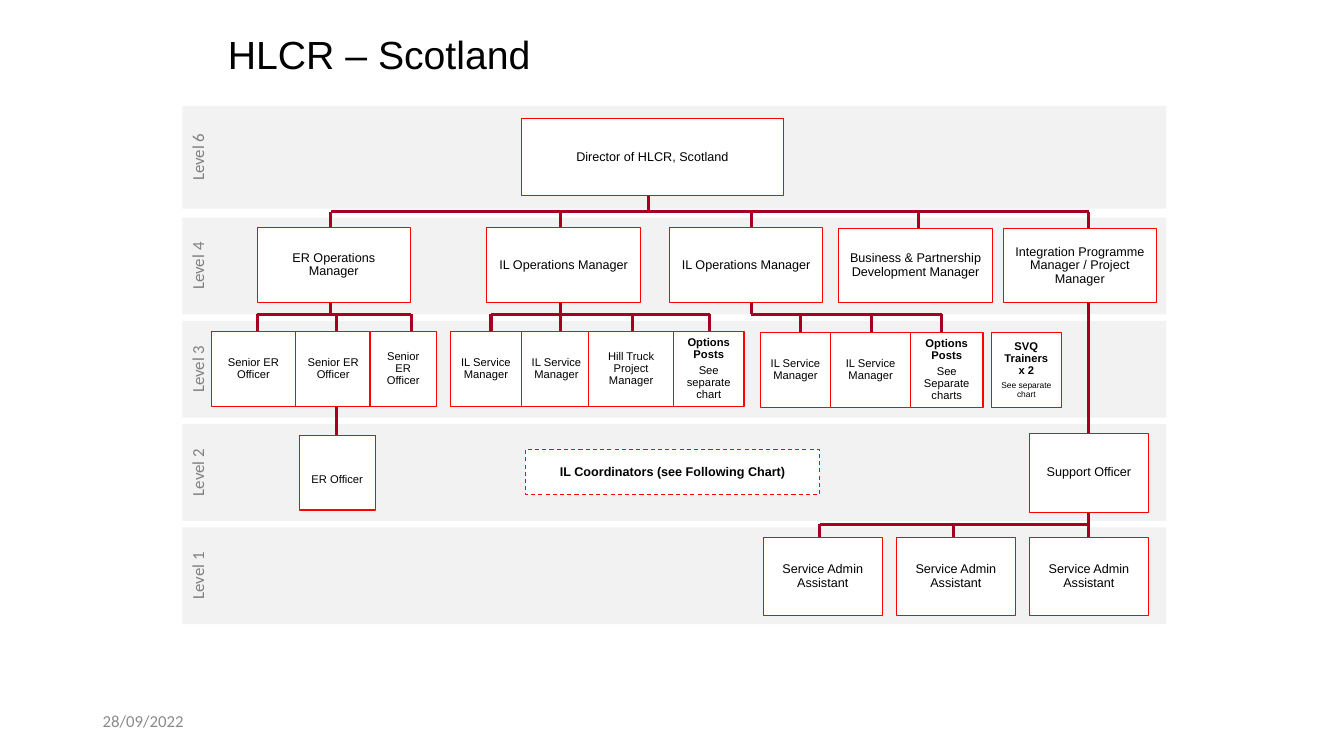
from pptx import Presentation
from pptx.dml.color import RGBColor
from pptx.enum.dml import MSO_LINE
from pptx.enum.shapes import MSO_CONNECTOR, MSO_SHAPE
from pptx.enum.text import MSO_ANCHOR, PP_ALIGN
from pptx.util import Inches, Pt
from lxml import etree

BLACK = RGBColor(0, 0, 0)
WHITE = RGBColor(0xFF, 0xFF, 0xFF)
RED = RGBColor(0xFF, 0, 0)
CRIMSON = RGBColor(0xA5, 0, 0x21)
BAND = RGBColor(0xF2, 0xF2, 0xF2)
LABEL = RGBColor(0x80, 0x80, 0x80)
DATE = RGBColor(0x8C, 0x8C, 0x8C)
A_NS = "http://schemas.openxmlformats.org/drawingml/2006/main"


class OrgChart:
    def __init__(self, prs):
        self.s = prs.slides.add_slide(prs.slide_layouts[5])
        self.shapes = self.s.shapes

    def style(self, p, size, color=BLACK, font="Arial", bold=False):
        for r in p.runs:
            r.font.size, r.font.name, r.font.bold = Pt(size), font, bold
            r.font.color.rgb = color

    def title(self, text, x, y, w, h):
        sp = self.shapes.title
        sp.left, sp.top, sp.width, sp.height = map(Inches, (x, y, w, h))
        tf = sp.text_frame
        tf.text = text
        tf.vertical_anchor = MSO_ANCHOR.MIDDLE
        p = tf.paragraphs[0]
        p.alignment, p.line_spacing = PP_ALIGN.LEFT, 0.9
        self.style(p, 28)

    def date(self, text, x, y, w, h):
        tf = self.shapes.add_textbox(*map(Inches, (x, y, w, h))).text_frame
        tf.word_wrap = True
        tf.vertical_anchor = MSO_ANCHOR.MIDDLE
        tf.text = text
        self.style(tf.paragraphs[0], 12, DATE, "Calibri")

    def band(self, text, y, h, inset=0.05):
        sp = self.shapes.add_shape(MSO_SHAPE.ROUNDED_RECTANGLE, Inches(1.81),
                                   Inches(y), Inches(9.76), Inches(h))
        sp.adjustments[0] = 0
        sp.shadow.inherit = False
        sp.fill.solid()
        sp.fill.fore_color.rgb = BAND
        sp.line.fill.background()
        tf = sp.text_frame
        tf.text = text
        tf.vertical_anchor = MSO_ANCHOR.TOP
        tf.margin_top = Inches(inset)
        tf._txBody.bodyPr.set("vert", "vert270")
        p = tf.paragraphs[0]
        p.alignment = PP_ALIGN.CENTER
        self.style(p, 12, LABEL, "Calibri")

    def line(self, x1, y1, x2, y2):
        c = self.shapes.add_connector(MSO_CONNECTOR.STRAIGHT,
                                      *map(Inches, (x1, y1, x2, y2)))
        c.line.color.rgb = CRIMSON
        c.line.width = Pt(2.25)
        etree.SubElement(c._element.spPr, f"{{{A_NS}}}effectLst")

    def tree(self, y, left, right, drops):
        """A horizontal bar with vertical drops given as (x, bottom)."""
        self.line(left, y, right, y)
        for x, bottom in drops:
            self.line(x, y, x, bottom)

    def box(self, text, x, y, w, h, size=9, bold=False, note=None,
            note_size=8, dashed=False, top=0.05):
        sp = self.shapes.add_shape(MSO_SHAPE.RECTANGLE,
                                   *map(Inches, (x, y, w, h)))
        sp.shadow.inherit = False
        sp.fill.solid()
        sp.fill.fore_color.rgb = WHITE
        sp.line.color.rgb = RED
        sp.line.width = Pt(0.75)
        if dashed:
            sp.line.dash_style = MSO_LINE.DASH
        tf = sp.text_frame
        tf.word_wrap = True
        tf.vertical_anchor = MSO_ANCHOR.MIDDLE
        tf.margin_top = Inches(top)
        tf.text = text
        self.style(tf.paragraphs[0], size, bold=bold)
        if note:
            tf.paragraphs[0].space_after = Pt(3)
            p = tf.add_paragraph()
            p.text = note
            self.style(p, note_size)
        for p in tf.paragraphs:
            p.alignment, p.line_spacing = PP_ALIGN.CENTER, 0.9


def main():
    prs = Presentation()
    prs.slide_width, prs.slide_height = Inches(13.33), Inches(7.5)
    chart = OrgChart(prs)
    chart.title("HLCR – Scotland", 2.16, 0.22, 9.07, 0.69)

    # Level bands
    chart.band("Level 6", 1.05, 1.02)
    for i, level in enumerate((4, 3, 2, 1)):
        chart.band(f"Level {level}", 2.16 + i * 1.024, 0.96,
                   0.1 if level == 1 else 0.05)

    # Reporting lines, running behind the boxes
    chart.line(6.43, 1.55, 6.43, 2.1)
    chart.tree(2.1, 3.28, 10.8, [(3.28, 3.12), (5.56, 3.12), (7.45, 3.12),
                                 (9.11, 2.65), (10.8, 5.56)])
    chart.tree(3.12, 2.55, 4.08, [(2.55, 3.66), (3.34, 4.69), (4.08, 3.66)])
    chart.tree(3.12, 4.87, 7.04, [(x, 3.66) for x in (4.87, 5.56, 6.27, 7.04)])
    chart.tree(3.12, 7.45, 9.34, [(x, 3.67) for x in (7.94, 8.64, 9.34)])
    chart.tree(5.2, 8.13, 10.8, [(8.13, 5.74), (9.46, 5.74)])

    # Level 6: director
    chart.box("Director of HLCR, Scotland", 5.17, 1.18, 2.6, 0.76)

    # Level 4: managers
    for text, x, y in (
            ("ER Operations Manager", 2.55, 2.26),
            ("IL Operations Manager", 4.83, 2.26),
            ("IL Operations Manager", 6.64, 2.26),
            ("Business & Partnership Development Manager", 8.32, 2.27),
            ("Integration Programme Manager / Project Manager", 9.95, 2.27)):
        chart.box(text, x, y, 1.52, 3 - y)

    # Level 3: officers and service managers
    for text, x, y, w in (
            ("Senior ER Officer", 2.1, 3.29, 0.83),
            ("Senior ER Officer", 2.93, 3.29, 0.75),
            ("Senior ER Officer", 3.67, 3.29, 0.66),
            ("IL Service Manager", 4.47, 3.29, 0.7),
            ("IL Service Manager", 5.17, 3.29, 0.7),
            ("Hill Truck Project Manager", 5.84, 3.29, 0.84),
            ("IL Service Manager", 7.54, 3.3, 0.7),
            ("IL Service Manager", 8.24, 3.3, 0.79)):
        chart.box(text, x, y, w, 0.74, size=8)
    for text, note, x, y, w, note_size in (
            ("Options Posts", "See separate chart", 6.68, 3.29, 0.7, 8),
            ("Options Posts", "See Separate charts", 9.03, 3.3, 0.72, 8),
            ("SVQ Trainers x 2", "See separate chart", 9.83, 3.3, 0.7, 6)):
        chart.box(text, x, y, w, 0.74, size=8, bold=True, note=note,
                  note_size=note_size)

    # Level 2: officers and coordinators
    chart.box("ER Officer", 2.97, 4.32, 0.75, 0.74, size=8, top=0.2)
    chart.box("IL Coordinators (see Following Chart)", 5.21, 4.46, 2.92, 0.45,
              bold=True, dashed=True)
    chart.box("Support Officer", 10.21, 4.3, 1.18, 0.78)

    # Level 1: assistants
    for i in range(3):
        chart.box("Service Admin Assistant", 7.57 + i * 1.32, 5.33, 1.18, 0.78)

    chart.date("28/09/2022", 0.92, 6.95, 3, 0.4)
    prs.save("out.pptx")


if __name__ == "__main__":
    main()
